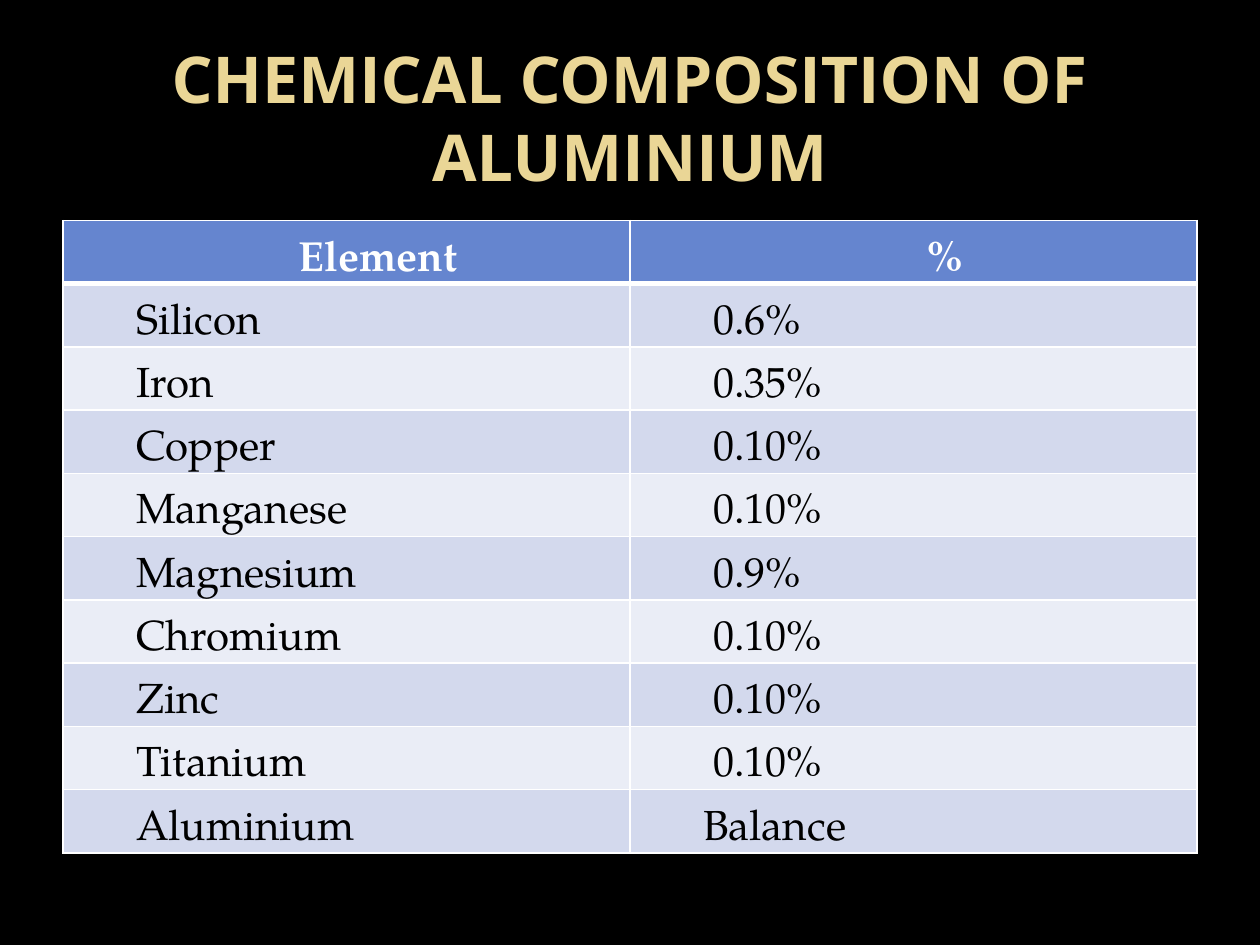
from lxml import etree
from pptx import Presentation
from pptx.dml.color import RGBColor
from pptx.enum.text import MSO_ANCHOR, PP_ALIGN
from pptx.oxml.ns import qn
from pptx.util import Inches, Pt

CENTER, LEFT = PP_ALIGN.CENTER, PP_ALIGN.LEFT
MIDDLE = MSO_ANCHOR.MIDDLE
HEADINGS = ("Element", "%")
COMPOSITION = [
    ("Silicon", "0.6%"),
    ("Iron", "0.35%"),
    ("Copper", "0.10%"),
    ("Manganese", "0.10%"),
    ("Magnesium", "0.9%"),
    ("Chromium", "0.10%"),
    ("Zinc", "0.10%"),
    ("Titanium", "0.10%"),
    ("Aluminium", "Balance"),
]
BANDS = ("D3D9ED", "EAEDF6")


def color(hex_code):
    """Turn a hex string into a colour."""
    return RGBColor.from_string(hex_code)


def style_font(font, name, size, hex_code, bold):
    """Set the typeface, size, colour and weight of a font."""
    font.name, font.size, font.bold = name, Pt(size), bold
    font.color.rgb = color(hex_code)


def add_title(slide, left, top, width, height):
    """Place the centred slide title in the given box."""
    title = slide.shapes.add_textbox(left, top, width, height)
    frame = title.text_frame
    frame.word_wrap = True
    frame.vertical_anchor = MIDDLE
    heading = frame.paragraphs[0]
    heading.text = "CHEMICAL COMPOSITION OF ALUMINIUM"
    heading.alignment = CENTER
    style_font(heading.font, "Open Sans", 36.9, "EAD696", True)


def set_borders(cell, bottom_width):
    """Draw white borders around a cell."""
    properties = cell._tc.get_or_add_tcPr()
    for side in ("lnL", "lnR", "lnT", "lnB"):
        width = bottom_width if side == "lnB" else 1
        line = etree.SubElement(properties, qn(f"a:{side}"), w=str(Pt(width)))
        fill = etree.SubElement(line, qn("a:solidFill"))
        etree.SubElement(fill, qn("a:srgbClr"), val="FFFFFF")


def fill_cell(cell, text, fill, is_heading):
    """Write and style one table cell."""
    cell.margin_left = cell.margin_right = Inches(0.08)
    cell.margin_top = cell.margin_bottom = 0
    set_borders(cell, 3 if is_heading else 1)
    cell.fill.solid()
    cell.fill.fore_color.rgb = color(fill)
    entry = cell.text_frame.paragraphs[0]
    entry.text = text
    entry.alignment = CENTER if is_heading else LEFT
    entry.line_spacing = Pt(35.5)
    indent = Inches(0.58 if text[0].isdigit() else 0.5)
    entry._p.get_or_add_pPr().set("marL", str(indent))
    text_color = "FFFFFF" if is_heading else "000000"
    style_font(entry.font, "TeX Gyre Pagella", 24, text_color, is_heading)


def add_composition_table(slide, left, top, width, height):
    """Place the table of elements and their shares in the given box."""
    rows = [HEADINGS, *COMPOSITION]
    table = slide.shapes.add_table(
        len(rows), len(HEADINGS), left, top, width, height
    ).table
    for row_index, row in enumerate(rows):
        is_heading = row_index == 0
        fill = "6585CF" if is_heading else BANDS[(row_index - 1) % 2]
        for column_index, text in enumerate(row):
            fill_cell(table.cell(row_index, column_index), text, fill, is_heading)


def main():
    """Build and save the slide."""
    deck = Presentation()
    deck.slide_width, deck.slide_height = Inches(10), Inches(7.5)
    slide = deck.slides.add_slide(deck.slide_layouts[6])
    slide.background.fill.solid()
    slide.background.fill.fore_color.rgb = color("000000")
    margin, width = Inches(0.5), Inches(9)
    add_title(slide, margin, Inches(0.3), width, Inches(1.25))
    add_composition_table(slide, margin, Inches(1.75), width, Inches(5.02))
    deck.save("out.pptx")


if __name__ == "__main__":
    main()
